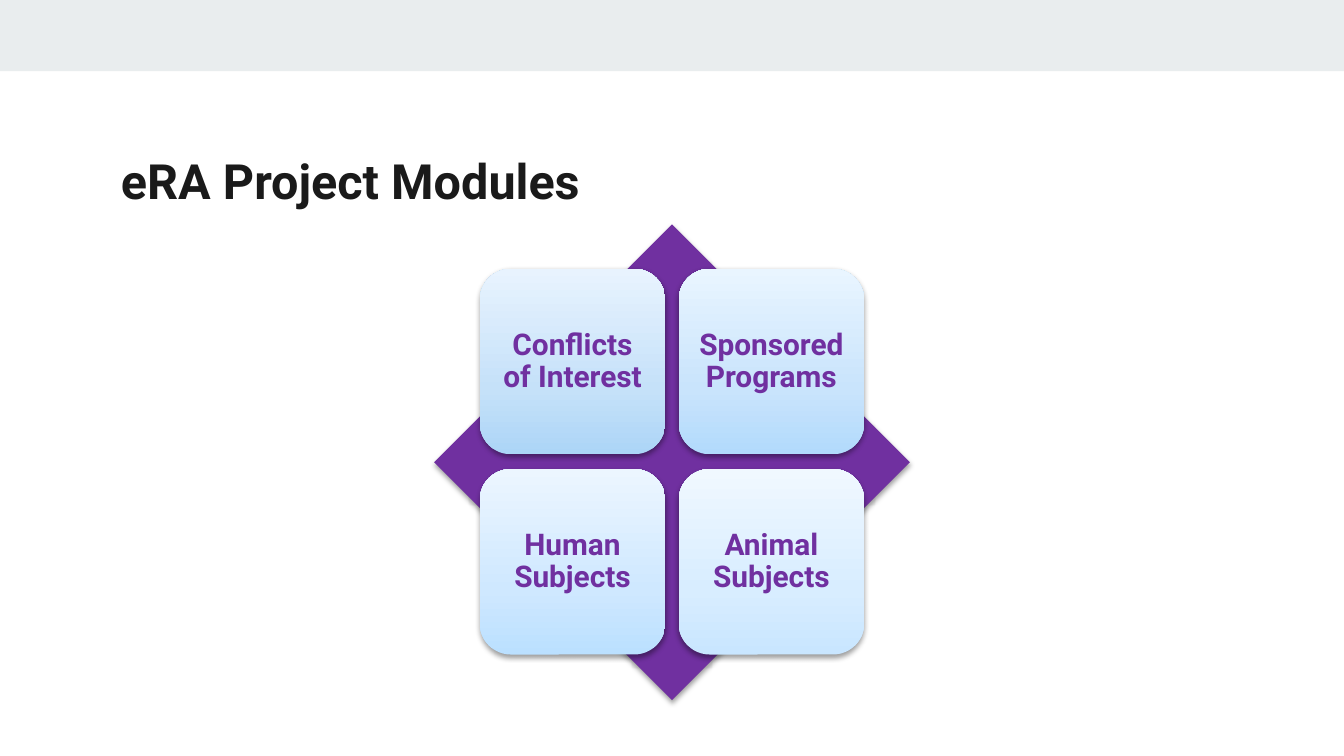
from copy import deepcopy
from dataclasses import dataclass
from itertools import product

from lxml import etree
from pptx import Presentation
from pptx import util as u
from pptx.dml.color import RGBColor
from pptx.enum import shapes, text
from pptx.oxml.ns import qn


@dataclass(frozen=True)
class Theme:
    font: str = "Roboto"
    band: str = "E9EDEE"
    ink: str = "1A1A1A"
    purple: str = "7030A0"
    shadow: str = "000000"
    title_size: int = 26
    card_size: int = 16


class SlideBuilder:
    def __init__(self, prs, theme):
        self.theme = theme
        self.slide = prs.slides.add_slide(prs.slide_layouts[5])

    def style(self, p, size, color):
        p.font.name = self.theme.font
        p.font.size = u.Pt(size)
        p.font.bold = True
        p.font.color.rgb = RGBColor.from_string(color)

    def inset(self, tf, margin):
        tf.margin_left = tf.margin_right = u.Inches(margin)
        tf.margin_top = tf.margin_bottom = u.Inches(margin)
        tf.word_wrap = True

    def title(self, wording, x, y, w, h):
        sp = self.slide.shapes.title
        sp.left, sp.top, sp.width, sp.height = map(u.Inches, (x, y, w, h))
        tf = sp.text_frame
        self.inset(tf, 0.1)
        tf.auto_size = text.MSO_AUTO_SIZE.NONE
        tf.vertical_anchor = text.MSO_ANCHOR.TOP
        p = tf.paragraphs[0]
        p.text = wording
        p.alignment = text.PP_ALIGN.LEFT
        self.style(p, self.theme.title_size, self.theme.ink)

    def shape(self, kind, x, y, w, h, color=None):
        sp = self.slide.shapes.add_shape(kind, *map(u.Inches, (x, y, w, h)))
        sp.shadow.inherit = False
        sp.line.fill.background()
        if color:
            sp.fill.solid()
            sp.fill.fore_color.rgb = RGBColor.from_string(color)
        return sp

    def drop_shadow(self, sp):
        effects = sp._element.spPr.find(qn("a:effectLst"))
        shadow = etree.SubElement(
            effects, qn("a:outerShdw"), blurRad=str(u.Pt(3.1)),
            dist=str(u.Pt(1.6)), dir="5400000", rotWithShape="0")
        color = etree.SubElement(shadow, qn("a:srgbClr"), val=self.theme.shadow)
        etree.SubElement(color, qn("a:alpha"), val="38000")

    def gradient(self, sp, colors):
        sp.fill.gradient()
        sp.fill.gradient_angle = 90
        stop_list = sp._element.spPr.find(qn("a:gradFill")).find(qn("a:gsLst"))
        stop_list.append(deepcopy(stop_list[-1]))
        for stop, position, color in zip(sp.fill.gradient_stops, (0, 0.35, 1), colors):
            stop.position = position
            stop.color.rgb = RGBColor.from_string(color)

    def diamond(self, x, y, size):
        sp = self.shape(shapes.MSO_SHAPE.DIAMOND, x, y, size, size, self.theme.purple)
        self.drop_shadow(sp)

    def card(self, wording, x, y, size, colors):
        sp = self.shape(shapes.MSO_SHAPE.ROUNDED_RECTANGLE, x, y, size, size)
        self.gradient(sp, colors)
        self.drop_shadow(sp)
        tf = sp.text_frame
        self.inset(tf, 0.07)
        tf.vertical_anchor = text.MSO_ANCHOR.MIDDLE
        p = tf.paragraphs[0]
        p.text = wording
        p.alignment = text.PP_ALIGN.CENTER
        p.line_spacing = 0.9
        self.style(p, self.theme.card_size, self.theme.purple)


MODULES = [
    ("Conflicts of Interest", ("ACD5F7", "C5E1F9", "E8F3FE")),
    ("Sponsored Programs", ("B2DAFC", "C9E4FC", "E9F5FF")),
    ("Human Subjects", ("BBE0FF", "CFE8FF", "ECF6FF")),
    ("Animal Subjects", ("C9E6FF", "D8EDFF", "F0F8FF")),
]
CARD_SIZE = 1.38
CARD_TOPS = (2, 3.49)
CARD_LEFTS = (3.57, 5.05)


def main():
    prs = Presentation()
    prs.slide_width = u.Inches(10)
    prs.slide_height = prs.slide_width * 9 // 16
    s = SlideBuilder(prs, Theme())
    s.shape(shapes.MSO_SHAPE.RECTANGLE, 0, 0, 10, 0.53, s.theme.band)
    s.title("eRA Project Modules", 0.8, 1.02, 8.41, 0.59)
    s.diamond(3.23, 1.67, 3.54)
    for (top, left), (wording, colors) in zip(product(CARD_TOPS, CARD_LEFTS), MODULES):
        s.card(wording, left, top, CARD_SIZE, colors)
    prs.save("out.pptx")


if __name__ == "__main__":
    main()
